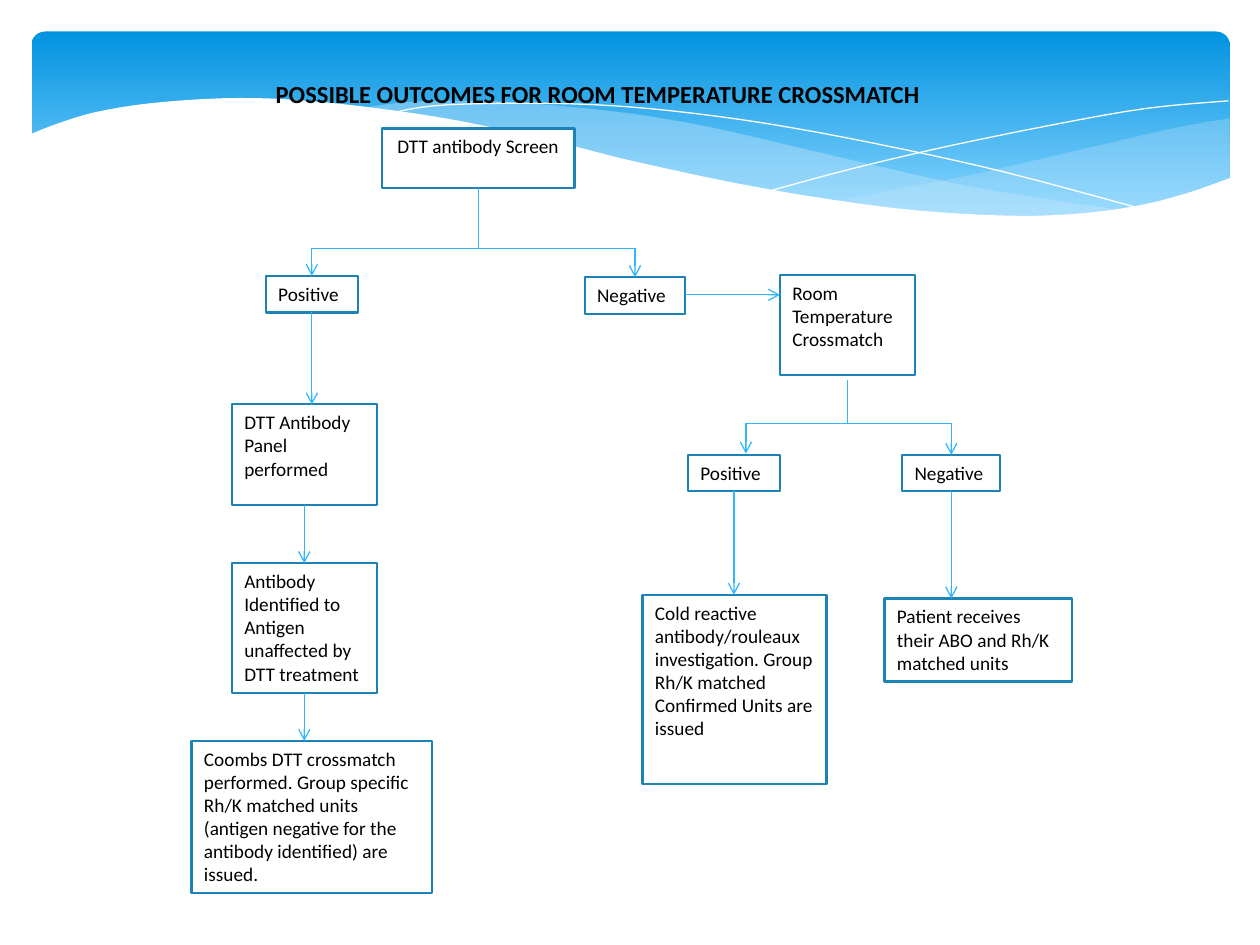
from lxml import etree
from pptx import Presentation
from pptx import util as u
from pptx.dml.color import RGBColor
from pptx.enum import shapes, text
from pptx.oxml.ns import qn

COLUMNS, ROWS = 100, 75
CELL = u.Inches(0.1)
COLOURS = {"white": "FFFFFF", "ink": "000000", "border": "1C83B9", "arrow": "31B6FD",
           "sky": "0293E0", "pale_sky": "83D3FE", "mist": "C6E7FC"}
FRAME = {"word_wrap": True, "auto_size": text.MSO_AUTO_SIZE.NONE}

STEPS = {
    "screen": (30.3, 10.2, 15.3, 4.7, "DTT antibody Screen"),
    "positive": (21.1, 21.9, 7.3, 2.9, "Positive"),
    "negative": (46.4, 22, 8, 2.9, "Negative"),
    "crossmatch": (61.9, 21.8, 10.7, 8, "Room Temperature Crossmatch"),
    "panel": (18.4, 32.1, 11.5, 8, "DTT Antibody Panel performed"),
    "reactive": (54.6, 36.1, 7.3, 2.9, "Positive"),
    "unreactive": (71.6, 36.1, 7.8, 2.9, "Negative"),
    "units": (70.2, 47.5, 14.9, 6.6, "Patient receives their ABO and Rh/K matched units"),
    "cold": (51, 47.2, 14.6, 15, "Cold reactive antibody/rouleaux investigation. "
             "Group Rh/K matched Confirmed Units are issued"),
    "identified": (18.4, 44.7, 11.5, 10.3,
                   "Antibody Identified to Antigen unaffected by DTT treatment"),
    "coombs": (15.2, 58.8, 19.1, 12.1, "Coombs DTT crossmatch performed. Group specific Rh/K "
               "matched units (antigen negative for the antibody identified) are issued."),
}
DROPS = [("positive", "panel"), ("panel", "identified"), ("identified", "coombs"),
         ("reactive", "cold"), ("unreactive", "units")]

RIGHT_VEIL = [
    [(97.6, 9.4), (93.5, 10.1), (86.1, 11.8), (77.9, 13.7), (72.9, 14.7), (66.1, 16)],
    [(66.1, 16), (70.5, 16.5), (75.7, 17), (81.4, 17.2), (86.3, 17), (90.5, 16.3),
     (94.2, 15.4), (97.6, 14.1)]]
LONG_VEIL = [
    [(89.3, 16.7), (83.7, 15.9), (77.5, 14.9), (70.6, 13.4), (62.9, 11.6), (56.9, 10.2),
     (51.4, 9.2), (46.5, 8.6), (42, 8.2), (38, 8), (34.4, 8), (31.3, 8.2), (28.6, 8.6)],
    [(28.6, 8.6), (34.2, 9.4), (40.4, 10.6), (44.9, 11.6), (53, 13.5), (60.1, 15),
     (66.5, 16.1), (72.2, 16.8), (77.3, 17.2), (81.8, 17.3), (85.7, 17.1), (89.3, 16.7)]]
FALLING_THREAD = [[(30.9, 9), (34.4, 8.4), (40.1, 8.2), (46.9, 8.3), (53.3, 8.8), (60.8, 9.8),
                   (69.5, 11.4), (79.5, 13.6), (90.7, 16.6)]]
RISING_THREAD = [[(61.3, 15.1), (67.2, 13.5), (74.8, 11.7), (83.6, 9.9), (91, 8.6),
                  (97.5, 8)]]
WHITE_WAVE = [
    [(97.7, 14.1), (94, 15.4), (89.9, 16.4), (85, 17), (79.3, 17.1), (70.8, 16.5),
     (60.3, 14.9), (50.3, 12.8), (44.7, 11.4), (36.5, 9.6), (29.2, 8.5), (23, 7.9),
     (17.7, 7.8), (11.9, 8.2), (7.6, 8.9), (4.6, 9.8), (2.3, 10.7)],
    [(2.3, 22.4), (97.7, 22.4)]]


def colour(name):
    """Return the named colour."""
    return RGBColor.from_string(COLOURS[name])


def cells(*values):
    """Turn grid cells into slide lengths."""
    return [round(value * CELL) for value in values]


def apply(target, values):
    """Set each named value on the target."""
    for name, value in values.items():
        setattr(target, name, value)


def paint(shape, fill=None, line=None, width=0):
    """Give a shape a flat fill and line, without shadow."""
    shape.shadow.inherit = False
    if fill:
        shape.fill.solid()
        shape.fill.fore_color.rgb = colour(fill)
    else:
        shape.fill.background()
    if line:
        shape.line.color.rgb = colour(line)
        shape.line.width = u.Pt(width)
    else:
        shape.line.fill.background()


def write(box, wording, size, align=text.PP_ALIGN.LEFT, anchor=text.MSO_ANCHOR.TOP, bold=False):
    """Write one paragraph in a shape."""
    apply(box.text_frame, {**FRAME, "vertical_anchor": anchor})
    para = box.text_frame.paragraphs[0]
    para.alignment = align
    span = para.add_run()
    span.text = wording
    apply(span.font, {"name": "Calibri", "size": u.Pt(size), "bold": bold})
    span.font.color.rgb = colour("ink")


def smooth(points, parts=4):
    """Sample a smooth curve that passes through the points."""
    padded = [points[0], *points, points[-1]]
    curve = [points[0]]
    for a, b, c, d in zip(padded, padded[1:], padded[2:], padded[3:]):
        for part in range(1, parts + 1):
            t = part / parts
            curve.append(tuple(
                q + t / 2 * (r - p + t * (2 * p - 5 * q + 4 * r - s + t * (3 * (q - r) + s - p)))
                for p, q, r, s in zip(a, b, c, d)))
    return curve


def add_wave(page, curves, fill=None, line=None, opacity=100):
    """Draw a filled wave, or an open thread when it has no fill."""
    points = [tuple(cells(*point)) for curve in curves for point in smooth(curve)]
    builder = page.shapes.build_freeform(*points[0])
    builder.add_line_segments(points[1:], close=bool(fill))
    wave = builder.convert_to_shape()
    paint(wave, fill, line)
    if opacity < 100:
        tint = wave._element.spPr.find(qn("a:solidFill"))[0]
        etree.SubElement(tint, qn("a:alpha"), val=str(opacity * 1000))


def add_banner(page):
    """Draw the gradient banner and its waves."""
    banner = page.shapes.add_shape(shapes.MSO_SHAPE.ROUNDED_RECTANGLE,
                                   *cells(2.5, 2.5, 95.1, 15.6))
    banner.adjustments[0] = 0.07
    paint(banner)
    banner.fill.gradient()
    banner.fill.gradient_angle = 270
    for stop, (name, place) in zip(banner.fill.gradient_stops, [("sky", 0), ("pale_sky", 0.9)]):
        stop.color.rgb = colour(name)
        stop.position = place
    add_wave(page, RIGHT_VEIL, "mist", opacity=29)
    add_wave(page, LONG_VEIL, "mist", opacity=40)
    for thread in (FALLING_THREAD, RISING_THREAD):
        add_wave(page, thread, line="white")
    add_wave(page, WHITE_WAVE, "white")


def add_step(page, left, top, width, height, wording, align=text.PP_ALIGN.LEFT):
    """Draw one bordered step of the flow."""
    box = page.shapes.add_shape(shapes.MSO_SHAPE.RECTANGLE, *cells(left, top, width, height))
    paint(box, "white", "border", 1.25)
    write(box, wording, 11, align)


def add_line(page, start, end, arrow=True):
    """Draw a straight line, with an arrowhead at its end if wanted."""
    line = page.shapes.add_connector(shapes.MSO_CONNECTOR.STRAIGHT, *cells(*start, *end))
    line.line.color.rgb = colour("arrow")
    line.line.width = u.Pt(0.75)
    if arrow:
        etree.SubElement(line.line._get_or_add_ln(), qn("a:tailEnd"), type="arrow")
    etree.SubElement(line._element.spPr, qn("a:effectLst"))


def centre(name):
    """Return the middle column of a step."""
    left, _, width, *_ = STEPS[name]
    return left + width / 2


def bottom(name):
    """Return the lower edge of a step."""
    return STEPS[name][1] + STEPS[name][3]


def add_fork(page, stem, top, bar, arms):
    """Draw a stem, a crossbar and an arrow down each arm."""
    add_line(page, (stem, top), (stem, bar), arrow=False)
    add_line(page, (arms[0][0], bar), (arms[-1][0], bar), arrow=False)
    for column, end in arms:
        add_line(page, (column, bar), (column, end))


def main():
    """Build the slide and save it."""
    deck = Presentation()
    apply(deck, {"slide_width": COLUMNS * CELL, "slide_height": ROWS * CELL})
    page = deck.slides.add_slide(deck.slide_layouts[6])
    add_banner(page)
    for name, step in STEPS.items():
        add_step(page, *step, text.PP_ALIGN.CENTER if name == "screen" else text.PP_ALIGN.LEFT)
    title = page.shapes.add_textbox(*cells(20.9, 3.6, 58.4, 7.7))
    write(title, "POSSIBLE OUTCOMES FOR ROOM TEMPERATURE CROSSMATCH", 14,
          anchor=text.MSO_ANCHOR.MIDDLE, bold=True)
    add_fork(page, centre("screen"), bottom("screen"), 19.7,
             [(centre(name), STEPS[name][1]) for name in ("positive", "negative")])
    add_fork(page, centre("crossmatch"), 30.2, 33.6, [(59.2, 36), (centre("unreactive"), 36.1)])
    for source, target in DROPS:
        add_line(page, (centre(source), bottom(source)), (centre(source), STEPS[target][1]))
    add_line(page, (54.4, 23.4), (STEPS["crossmatch"][0], 23.4))
    deck.save("out.pptx")


if __name__ == "__main__":
    main()
